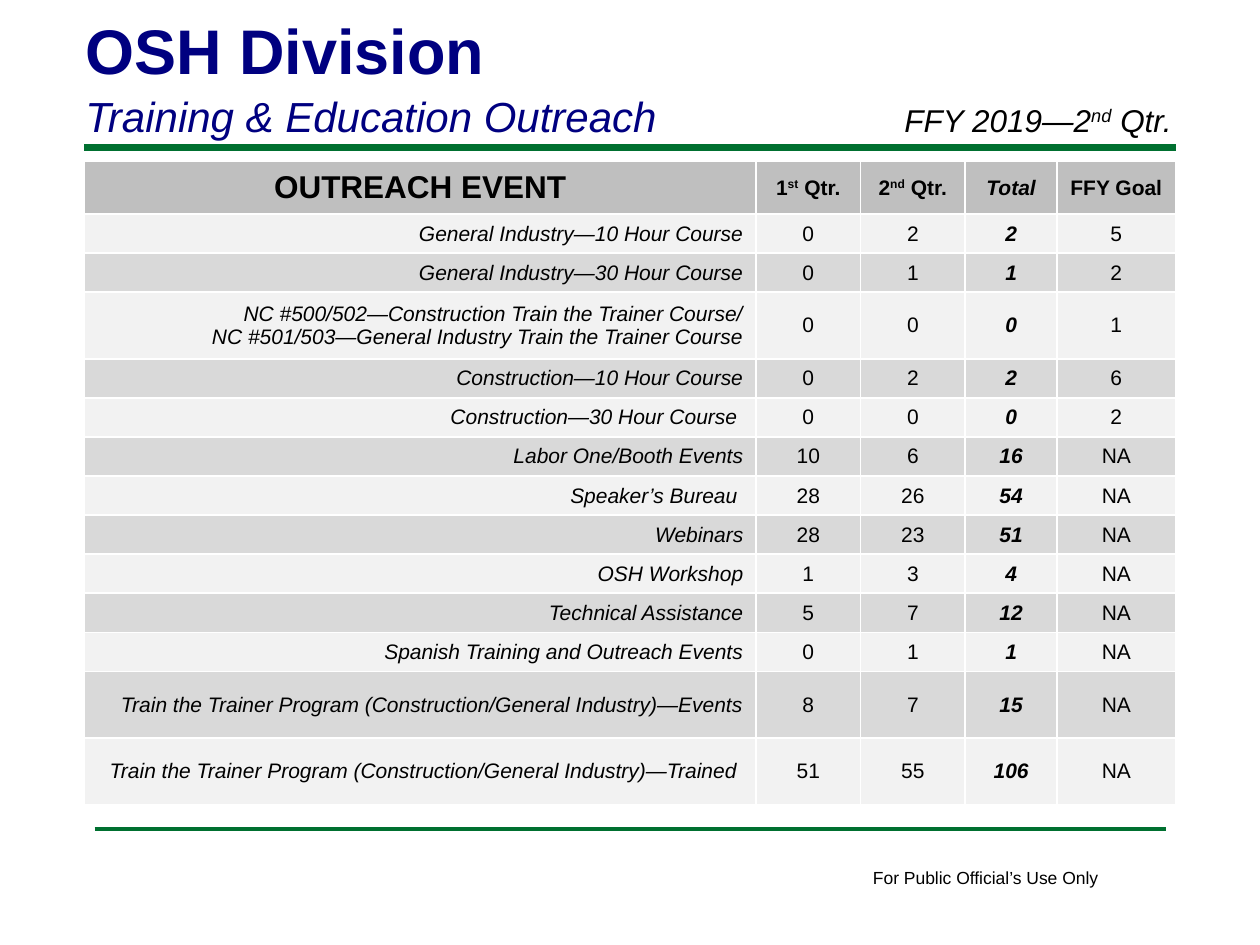
from lxml import etree
from pptx import Presentation
from pptx.dml.color import RGBColor
from pptx.enum.shapes import MSO_CONNECTOR
from pptx.enum.text import MSO_ANCHOR, PP_ALIGN
from pptx.oxml.ns import qn
from pptx.util import Inches, Pt

LINE = MSO_CONNECTOR.STRAIGHT
TOP, MIDDLE, BOTTOM = MSO_ANCHOR.TOP, MSO_ANCHOR.MIDDLE, MSO_ANCHOR.BOTTOM
LEFT, CENTER, RIGHT = PP_ALIGN.LEFT, PP_ALIGN.CENTER, PP_ALIGN.RIGHT

BLACK = RGBColor(0, 0, 0)
NAVY = RGBColor(0, 0, 0x80)
GREEN = RGBColor(0, 0x70, 0x30)
HEAD = RGBColor(0xBF, 0xBF, 0xBF)
BANDS = RGBColor(0xF2, 0xF2, 0xF2), RGBColor(0xD9, 0xD9, 0xD9)

WIDTHS = 5.33, 0.83, 0.83, 0.73, 0.94
HEADER = "OUTREACH EVENT", "1^st^ Qtr.", "2^nd^ Qtr.", "Total", "FFY Goal"
# Event, first quarter, second quarter, goal, row height
EVENTS = [
    ("General Industry—10 Hour Course", 0, 2, 5, 0.31),
    ("General Industry—30 Hour Course", 0, 1, 2, 0.31),
    ("NC #500/502—Construction Train the Trainer Course/\n"
     "NC #501/503—General Industry Train the Trainer Course", 0, 0, 1, 0.53),
    ("Construction—10 Hour Course", 0, 2, 6, 0.31),
    ("Construction—30 Hour Course ", 0, 0, 2, 0.31),
    ("Labor One/Booth Events", 10, 6, "NA", 0.31),
    ("Speaker’s Bureau ", 28, 26, "NA", 0.31),
    ("Webinars", 28, 23, "NA", 0.31),
    ("OSH Workshop", 1, 3, "NA", 0.31),
    ("Technical Assistance", 5, 7, "NA", 0.31),
    ("Spanish Training and Outreach Events", 0, 1, "NA", 0.31),
    ("Train the Trainer Program (Construction/General Industry)—Events",
     8, 7, "NA", 0.53),
    ("Train the Trainer Program (Construction/General Industry)—Trained ",
     51, 55, "NA", 0.53),
]


def add_runs(para, text, size, color=BLACK, bold=False, italic=False):
    """Add text as runs; parts between carets are superscript."""
    for i, part in enumerate(text.split("^")):
        run = para.add_run()
        run.text = part
        font = run.font
        font.name, font.size = "Arial", Pt(size)
        font.bold, font.italic = bold, italic
        font.color.rgb = color
        if i % 2:
            run._r.get_or_add_rPr().set("baseline", "30000")


def add_box(slide, x, y, w, h, anchor=TOP, wrap=True):
    frame = slide.shapes.add_textbox(
        Inches(x), Inches(y), Inches(w), Inches(h)).text_frame
    frame.word_wrap = wrap
    frame.vertical_anchor = anchor
    return frame


def add_rule(slide, x, y, end, width):
    rule = slide.shapes.add_connector(
        LINE, Inches(x), Inches(y), Inches(end), Inches(y))
    rule.line.color.rgb = GREEN
    rule.line.width = Pt(width)
    etree.SubElement(rule._element.spPr, qn("a:effectLst"))


def fill_cell(cell, text, fill, align=CENTER, size=12, **style):
    cell.fill.solid()
    cell.fill.fore_color.rgb = fill
    cell.vertical_anchor = MIDDLE
    frame = cell.text_frame
    for i, line in enumerate(text.split("\n")):
        para = frame.add_paragraph() if i else frame.paragraphs[0]
        para.alignment = align
        add_runs(para, line, size, **style)


def add_events(slide):
    """The default table style supplies the white cell borders."""
    table = slide.shapes.add_table(
        len(EVENTS) + 1, len(WIDTHS), Inches(0.67), Inches(1.28),
        Inches(8.67), Inches(5.13)).table
    table.horz_banding = False
    for col, width in zip(table.columns, WIDTHS):
        col.width = Inches(width)

    table.rows[0].height = Inches(0.42)
    for c, text in enumerate(HEADER):
        fill_cell(table.cell(0, c), text, HEAD, size=12 if c else 18,
                  bold=True, italic=text == "Total")

    for r, (name, first, second, goal, height) in enumerate(EVENTS, 1):
        table.rows[r].height = Inches(height)
        band = BANDS[(r - 1) % 2]
        fill_cell(table.cell(r, 0), name, band, RIGHT, italic=True)
        values = first, second, first + second, goal
        for c, value in enumerate(values, 1):
            total = HEADER[c] == "Total"
            fill_cell(table.cell(r, c), str(value), band,
                      bold=total, italic=total)


def main():
    deck = Presentation()
    deck.slide_width, deck.slide_height = Inches(10), Inches(7.5)
    slide = deck.slides.add_slide(deck.slide_layouts[6])

    add_rule(slide, 0.67, 1.17, 9.33, 4)
    add_rule(slide, 0.75, 6.58, 9.25, 2)

    note = add_box(slide, 6.83, 6.83, 2.01, 0.27, wrap=False)
    add_runs(note.paragraphs[0], "For Public Official’s Use Only", 10)

    title = add_box(slide, 0.58, 0.06, 8.25, 1.11, BOTTOM)
    add_runs(title.paragraphs[0], "OSH Division", 36, NAVY, bold=True)
    para = title.add_paragraph()
    para.space_before = Pt(2)
    add_runs(para, "Training & Education Outreach", 24, NAVY, italic=True)

    term = add_box(slide, 7.08, 0.75, 2.5, 0.4)
    add_runs(term.paragraphs[0], "FFY 2019—2^nd^ Qtr.", 18, italic=True)

    add_events(slide)
    deck.save("out.pptx")


if __name__ == "__main__":
    main()
